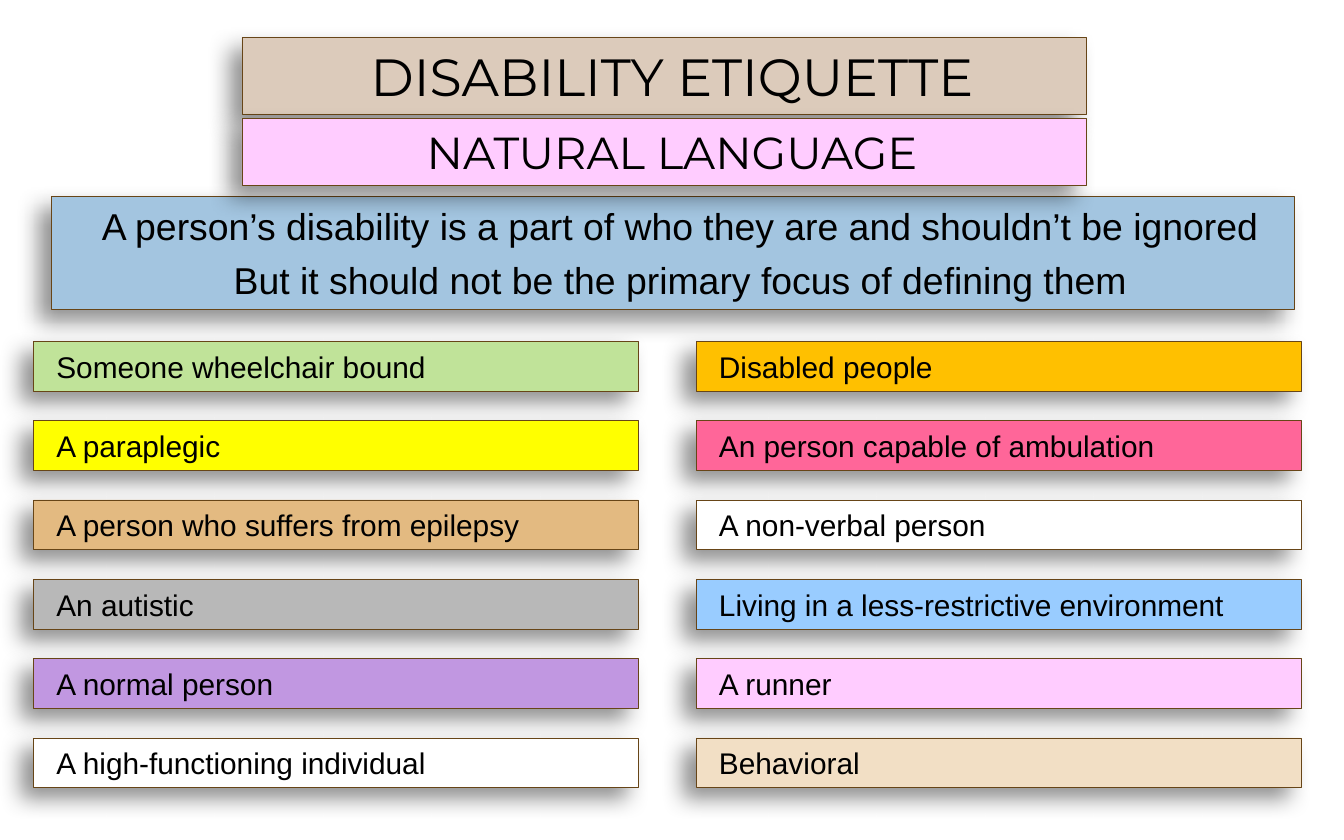
from lxml import etree
from pptx import Presentation
from pptx.dml.color import RGBColor
from pptx.enum.shapes import MSO_SHAPE
from pptx.enum.text import MSO_ANCHOR, PP_ALIGN
from pptx.oxml import parse_xml
from pptx.oxml.ns import nsdecls, qn
from pptx.util import Inches, Pt

COLORS = {
    "black": "000000", "brown": "674517", "white": "FFFFFF",
    "steel": "A3C5E0", "taupe": "DCCBBB", "pink": "FFCCFF",
    "green": "C0E399", "yellow": "FFFF00", "tan": "E3BA81",
    "gray": "B8B8B8", "purple": "C197E1", "amber": "FFC000",
    "rose": "FF6699", "sky": "99CCFF", "cream": "F2DFC5",
}


def add_shadow(box):
    """Cast a soft black shadow down and to the left."""
    box.shadow.inherit = False
    effects = box.element.spPr.find(qn("a:effectLst"))
    effects.append(parse_xml(
        f'<a:outerShdw {nsdecls("a")} blurRad="{Pt(12)}" dist="{Pt(9)}" '
        f'dir="{140 * 60000}" algn="ctr" rotWithShape="0">'
        f'<a:srgbClr val="{COLORS["black"]}"><a:alpha val="44000"/></a:srgbClr>'
        '</a:outerShdw>'))


def add_panel(lines, left, top, width, height, fill, size, font="Arial",
              align=PP_ALIGN.CENTER):
    panel = slide.shapes.add_shape(
        MSO_SHAPE.RECTANGLE, Inches(left), Inches(top), Inches(width), Inches(height))
    panel.fill.solid()
    panel.fill.fore_color.rgb = RGBColor.from_string(COLORS[fill])
    panel.line.color.rgb = RGBColor.from_string(COLORS["brown"])
    panel.line.width = Pt(0.25)
    add_shadow(panel)

    frame = panel.text_frame
    frame.word_wrap = True
    frame.vertical_anchor = MSO_ANCHOR.MIDDLE
    for side in ("left", "top", "right", "bottom"):
        setattr(frame, f"margin_{side}", Inches(0.05))
    frame.text = "\n".join(lines)
    for number, paragraph in enumerate(frame.paragraphs):
        properties = paragraph.element.get_or_add_pPr() if hasattr(
            paragraph, "element") else paragraph._p.get_or_add_pPr()
        properties.set("marL", str(Inches(0.12)))
        properties.set("indent", "0")
        paragraph.alignment = align
        if number:
            paragraph.space_before = Pt(4.6)
        for name, value in {"name": font, "size": Pt(size)}.items():
            setattr(paragraph.font, name, value)
        paragraph.font.color.rgb = RGBColor.from_string(COLORS["black"])


presentation = Presentation()
presentation.slide_width = Inches(10)
presentation.slide_height = Inches(6.25)
slide = presentation.slides.add_slide(presentation.slide_layouts[6])

principle = [
    "A person’s disability is a part of who they are and shouldn’t be ignored",
    "But it should not be the primary focus of defining them",
]
add_panel(principle, 0.38, 1.46, 9.25, 0.84, "steel", 20)
add_panel(["DISABILITY ETIQUETTE"], 1.8, 0.28, 6.28, 0.57, "taupe", 28, "Montserrat")
add_panel(["NATURAL LANGUAGE"], 1.8, 0.88, 6.28, 0.5, "pink", 24, "Montserrat")

# Each column: left edge and its phrases from top to bottom
phrase_columns = [
    (0.25, [
        ("Someone wheelchair bound", "green"),
        ("A paraplegic", "yellow"),
        ("A person who suffers from epilepsy", "tan"),
        ("An autistic", "gray"),
        ("A normal person", "purple"),
        ("A high-functioning individual", "white"),
    ]),
    (5.18, [
        ("Disabled people", "amber"),
        ("An person capable of ambulation", "rose"),
        ("A non-verbal person", "white"),
        ("Living in a less-restrictive environment", "sky"),
        ("A runner", "pink"),
        ("Behavioral", "cream"),
    ]),
]
for left, phrases in phrase_columns:
    for row, (phrase, fill) in enumerate(phrases):
        add_panel([phrase], left, 2.54 + 0.59 * row, 4.5, 0.37, fill, 16,
                  align=PP_ALIGN.LEFT)

presentation.save("out.pptx")
